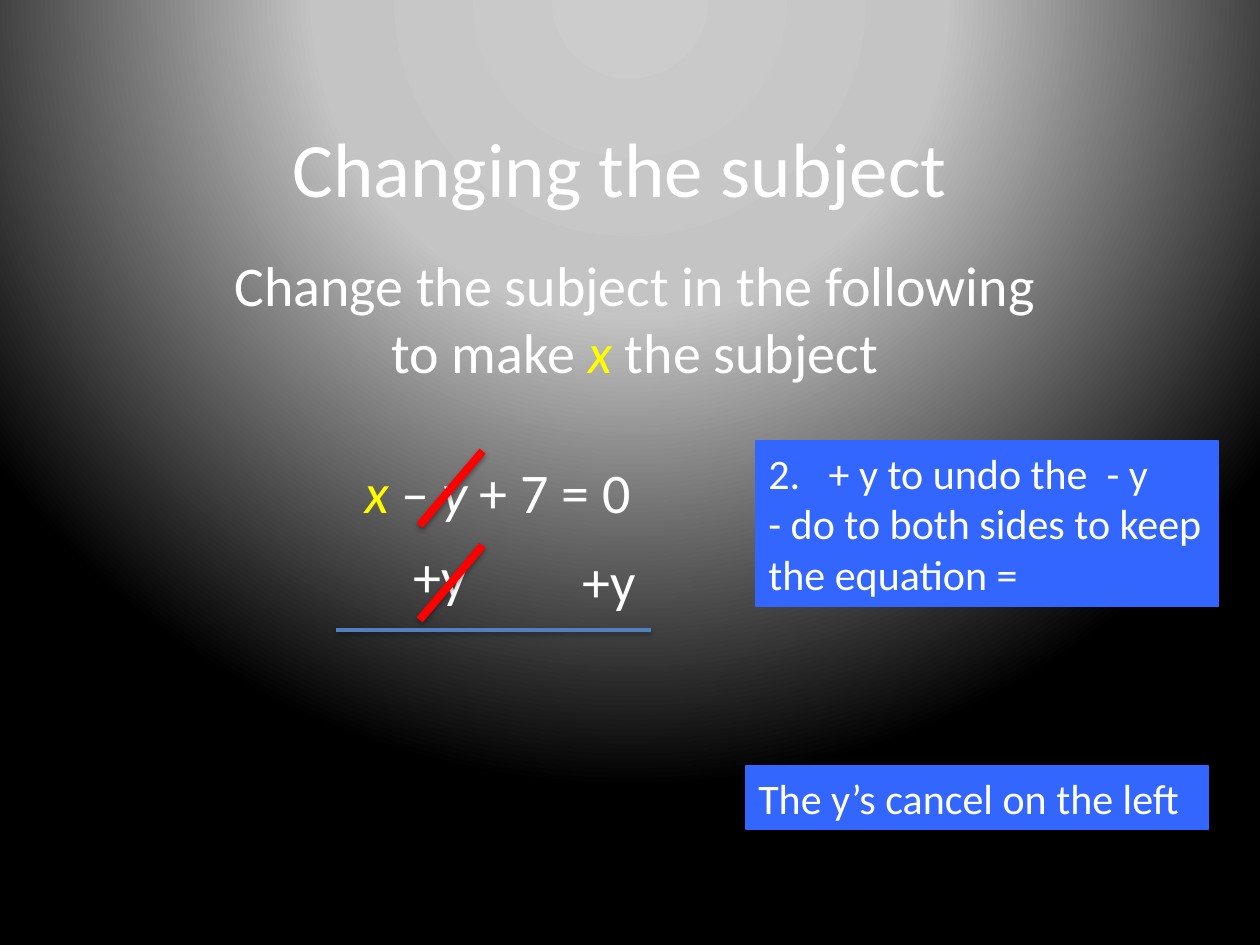
"""Build the slide on changing the subject of an equation."""
from dataclasses import dataclass

from pptx import Presentation
from pptx import util as u
from pptx.dml.color import RGBColor
from pptx.enum import shapes, text
from pptx.oxml import parse_xml
from pptx.oxml.ns import nsdecls
from pptx.slide import Slide
from pptx.text.text import TextFrame

WHITE = RGBColor(0xFF, 0xFF, 0xFF)
YELLOW = RGBColor(0xFF, 0xFF, 0x00)
RED = RGBColor(0xFF, 0x00, 0x00)
RULE_BLUE = RGBColor(0x4F, 0x81, 0xBD)
NOTE_BLUE = RGBColor(0x33, 0x66, 0xFF)
GLOW_STOPS = (
    (0, RGBColor(0xCC, 0xCC, 0xCC)),
    (40, RGBColor(0xC4, 0xC4, 0xC4)),
    (100, RGBColor(0x00, 0x00, 0x00)),
)
FONT = "Calibri"


@dataclass(frozen=True)
class Term:
    words: str
    color: RGBColor = WHITE
    italic: bool = False


@dataclass(frozen=True)
class Caption:
    box: tuple[float, float, float, float]
    terms: tuple[Term, ...]
    size: float = 32
    space_before: float = 6.4
    anchor: text.MSO_ANCHOR = text.MSO_ANCHOR.TOP


@dataclass(frozen=True)
class Note:
    box: tuple[float, float, float, float]
    steps: tuple[str, ...]


@dataclass(frozen=True)
class Stroke:
    start: tuple[float, float]
    end: tuple[float, float]
    color: RGBColor
    width: float


X = Term("x", YELLOW, True)
CAPTIONS = (
    Caption((0.67, 0.52, 8.5, 1.61), (Term("Changing the subject"),),
            44, 0, text.MSO_ANCHOR.MIDDLE),
    Caption((1.54, 1.94, 7, 1.92),
            (Term("Change the subject in the following to make "), X,
             Term(" the subject"))),
    Caption((1.08, 3.58, 5.74, 0.71),
            (Term("x ", YELLOW, True), Term("– "), Term("y", italic=True),
             Term(" + 7 = 0"))),
    Caption((2.83, 4.25, 1.33, 0.71), (Term("+y"),)),
    Caption((4.17, 4.29, 1.33, 0.71), (Term("+y"),)),
)
NOTES = (
    Note((5.92, 6.08, 3.67, 0.5), ("The y’s cancel on the left",)),
    Note((6, 3.5, 3.67, 1.31),
         ("2.   + y to undo the  - y",
          "- do to both sides to keep the equation =")),
)
STROKES = (
    Stroke((2.67, 5), (5.17, 5), RULE_BLUE, 2),
    Stroke((3.83, 3.58), (3.33, 4.17), RED, 4.5),
    Stroke((3.83, 4.33), (3.33, 4.92), RED, 4.5),
)


def set_values(target: object, values: dict[str, object]) -> None:
    for name, value in values.items():
        setattr(target, name, value)


def write_paragraph(frame: TextFrame, index: int, terms: tuple[Term, ...],
                    size: float, layout: dict[str, object]) -> None:
    paragraph = frame.add_paragraph() if index else frame.paragraphs[0]
    set_values(paragraph, layout)
    for term in terms:
        run = paragraph.add_run()
        run.text = term.words
        set_values(run.font, {"name": FONT, "size": u.Pt(size),
                              "italic": term.italic})
        run.font.color.rgb = term.color


def paint_background(slide: Slide) -> None:
    slide.background.fill.solid()
    properties = slide.element.xpath(".//p:bgPr")[0]
    stops = "".join(
        f'<a:gs pos="{position * 1000}"><a:srgbClr val="{color}"/></a:gs>'
        for position, color in GLOW_STOPS)
    properties.replace(properties[0], parse_xml(
        f'<a:gradFill {nsdecls("a")} rotWithShape="1"><a:gsLst>{stops}</a:gsLst>'
        '<a:path path="circle"><a:fillToRect l="50000" t="-80000" '
        'r="50000" b="180000"/></a:path></a:gradFill>'))


def draw_caption(slide: Slide, caption: Caption) -> None:
    frame = slide.shapes.add_textbox(*map(u.Inches, caption.box)).text_frame
    set_values(frame, {"word_wrap": True, "vertical_anchor": caption.anchor})
    write_paragraph(frame, 0, caption.terms, caption.size,
                    {"alignment": text.PP_ALIGN.CENTER,
                     "space_before": u.Pt(caption.space_before)})


def draw_note(slide: Slide, note: Note) -> None:
    panel = slide.shapes.add_shape(shapes.MSO_SHAPE.RECTANGLE,
                                   *map(u.Inches, note.box))
    panel.shadow.inherit = False
    for paint in (panel.fill, panel.line.fill):
        paint.solid()
        paint.fore_color.rgb = NOTE_BLUE
    panel.line.width = u.Pt(0.75)
    set_values(panel.text_frame,
               {"word_wrap": True, "vertical_anchor": text.MSO_ANCHOR.TOP,
                "auto_size": text.MSO_AUTO_SIZE.SHAPE_TO_FIT_TEXT})
    for index, step in enumerate(note.steps):
        write_paragraph(panel.text_frame, index, (Term(step),), 24,
                        {"alignment": text.PP_ALIGN.LEFT})


def draw_stroke(slide: Slide, stroke: Stroke) -> None:
    line = slide.shapes.add_connector(
        shapes.MSO_CONNECTOR.STRAIGHT, *map(u.Inches, stroke.start + stroke.end))
    line.line.color.rgb = stroke.color
    line.line.width = u.Pt(stroke.width)
    line.element.spPr.append(parse_xml(
        f'<a:effectLst {nsdecls("a")}><a:outerShdw blurRad="{u.Pt(3.1)}" '
        f'dist="{u.Pt(1.6)}" dir="5400000" rotWithShape="0">'
        '<a:srgbClr val="000000"><a:alpha val="38000"/></a:srgbClr>'
        '</a:outerShdw></a:effectLst>'))


def main() -> None:
    deck = Presentation()
    set_values(deck, {"slide_width": u.Inches(10), "slide_height": u.Inches(7.5)})
    slide = deck.slides.add_slide(deck.slide_layouts[6])
    paint_background(slide)
    for caption in CAPTIONS:
        draw_caption(slide, caption)
    for note in NOTES:
        draw_note(slide, note)
    for stroke in STROKES:
        draw_stroke(slide, stroke)
    deck.save("out.pptx")


if __name__ == "__main__":
    main()
